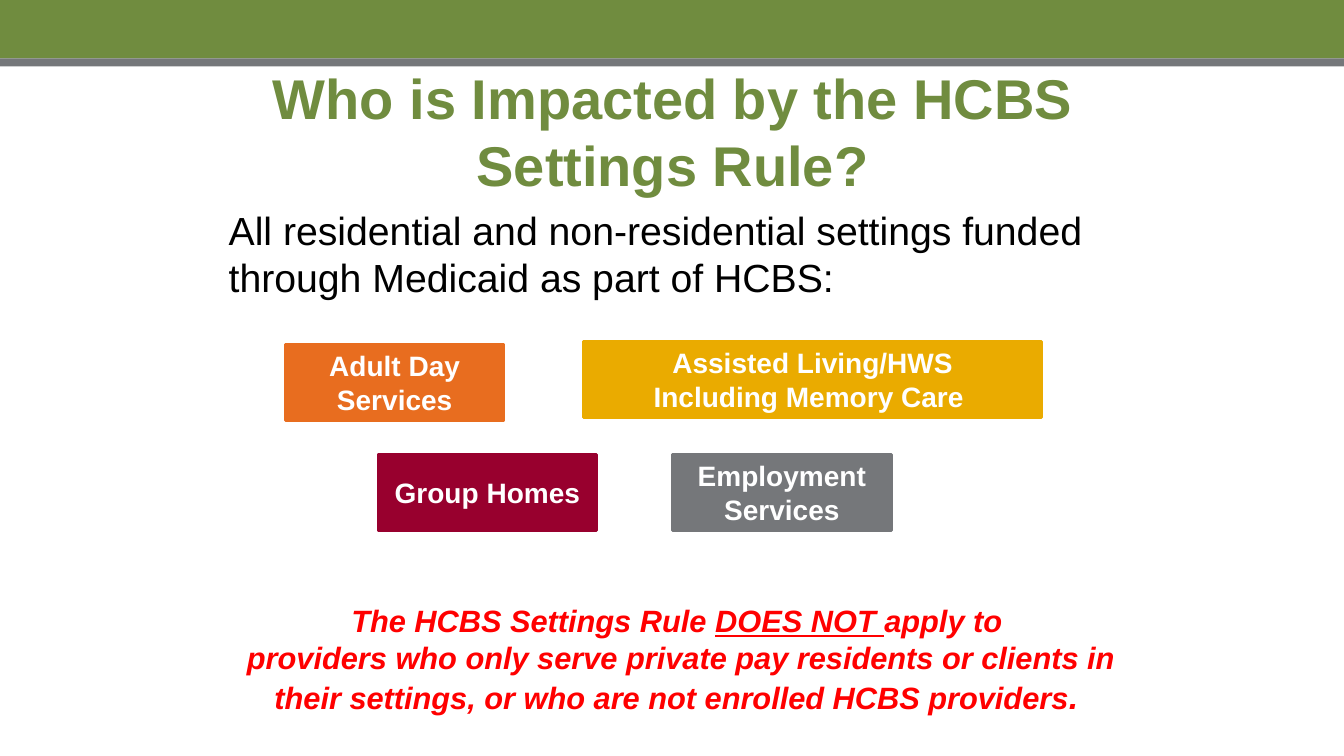
from dataclasses import dataclass

from pptx import Presentation
from pptx import util as u
from pptx.dml.color import RGBColor
from pptx.enum import shapes, text

FONT = "Arial"
GREEN, GREY, WHITE, RED = "708C3F", "75777A", "FFFFFF", "FF0000"
SLIDE_W, SLIDE_H = 13.33, 7.5
BOX_H = 0.75


@dataclass
class Setting:
    lines: list[str]
    left: float
    top: float
    width: float
    color: str


@dataclass
class Style:
    size: float
    color: str
    bold: bool = True
    italic: bool = False


SETTINGS = [
    Setting(["Adult Day Services"], 2.83, 3.42, 2.17, "E86D1F"),
    Setting(["Assisted Living/HWS", "Including Memory Care "], 5.79, 3.39, 4.54, "EAAB00"),
    Setting(["Group Homes"], 3.75, 4.51, 2.17, "98002E"),
    Setting(["Employment Services"], 6.67, 4.51, 2.17, GREY),
]


def rgb(color: str) -> RGBColor:
    return RGBColor.from_string(color)


def place(sp, left: float, top: float, width: float, height: float) -> None:
    sp.left, sp.top = u.Inches(left), u.Inches(top)
    sp.width, sp.height = u.Inches(width), u.Inches(height)


def add_run(p, content: str, style: Style):
    r = p.add_run()
    r.text = content
    r.font.name = FONT
    r.font.size = u.Pt(style.size)
    r.font.color.rgb = rgb(style.color)
    r.font.bold = style.bold
    r.font.italic = style.italic
    return r


def add_rect(s, left: float, top: float, width: float, height: float, color: str):
    sp = s.shapes.add_shape(shapes.MSO_SHAPE.RECTANGLE, *map(u.Inches, (left, top, width, height)))
    sp.shadow.inherit = False
    sp.fill.solid()
    sp.fill.fore_color.rgb = rgb(color)
    sp.line.fill.background()
    return sp


def add_setting(s, setting: Setting) -> None:
    sp = add_rect(s, setting.left, setting.top, setting.width, BOX_H, setting.color)
    sp.line.color.rgb = rgb(setting.color)
    sp.line.width = u.Pt(2)
    tf = sp.text_frame
    tf.word_wrap = True
    tf.vertical_anchor = text.MSO_ANCHOR.MIDDLE
    for i, line in enumerate(setting.lines):
        p = tf.add_paragraph() if i else tf.paragraphs[0]
        p.alignment = text.PP_ALIGN.CENTER
        add_run(p, line, Style(20, WHITE))


def add_text_box(s, left: float, top: float, width: float, height: float):
    sp = s.shapes.add_textbox(*map(u.Inches, (left, top, width, height)))
    sp.text_frame.word_wrap = True
    return sp.text_frame


def main() -> None:
    prs = Presentation()
    prs.slide_width, prs.slide_height = u.Inches(SLIDE_W), u.Inches(SLIDE_H)
    s = prs.slides.add_slide(prs.slide_layouts[5])

    # Header bands
    add_rect(s, 0, 0, SLIDE_W, 0.58, GREEN)
    add_rect(s, 0, 0.58, SLIDE_W, 0.08, GREY)

    # Title
    title = s.shapes.title
    place(title, 1.67, 0.67, 10, 1.25)
    tf = title.text_frame
    tf.vertical_anchor = text.MSO_ANCHOR.MIDDLE
    p = tf.paragraphs[0]
    p.alignment = text.PP_ALIGN.CENTER
    add_run(p, "Who is Impacted by the HCBS Settings Rule?", Style(40, GREEN))

    # Introduction
    p = add_text_box(s, 2.17, 2, 9, 1.1).paragraphs[0]
    add_run(p, "All residential and non-residential settings funded through Medicaid as part of HCBS:",
            Style(28, "000000", bold=False))

    # Affected settings
    for setting in SETTINGS:
        add_setting(s, setting)

    # Exception note
    note = Style(22, RED, italic=True)
    tf = add_text_box(s, 2.17, 5.92, 9.17, 1.25)
    p = tf.paragraphs[0]
    p.alignment = text.PP_ALIGN.CENTER
    add_run(p, "The HCBS Settings Rule ", note)
    add_run(p, "DOES NOT ", note).font.underline = True
    add_run(p, "apply to ", note)
    p = tf.add_paragraph()
    p.alignment = text.PP_ALIGN.CENTER
    add_run(p, "providers who only serve private pay residents or clients in their settings, "
               "or who are not enrolled HCBS providers", note)
    add_run(p, ". ", Style(24, RED, italic=True))

    prs.save("out.pptx")


if __name__ == "__main__":
    main()
